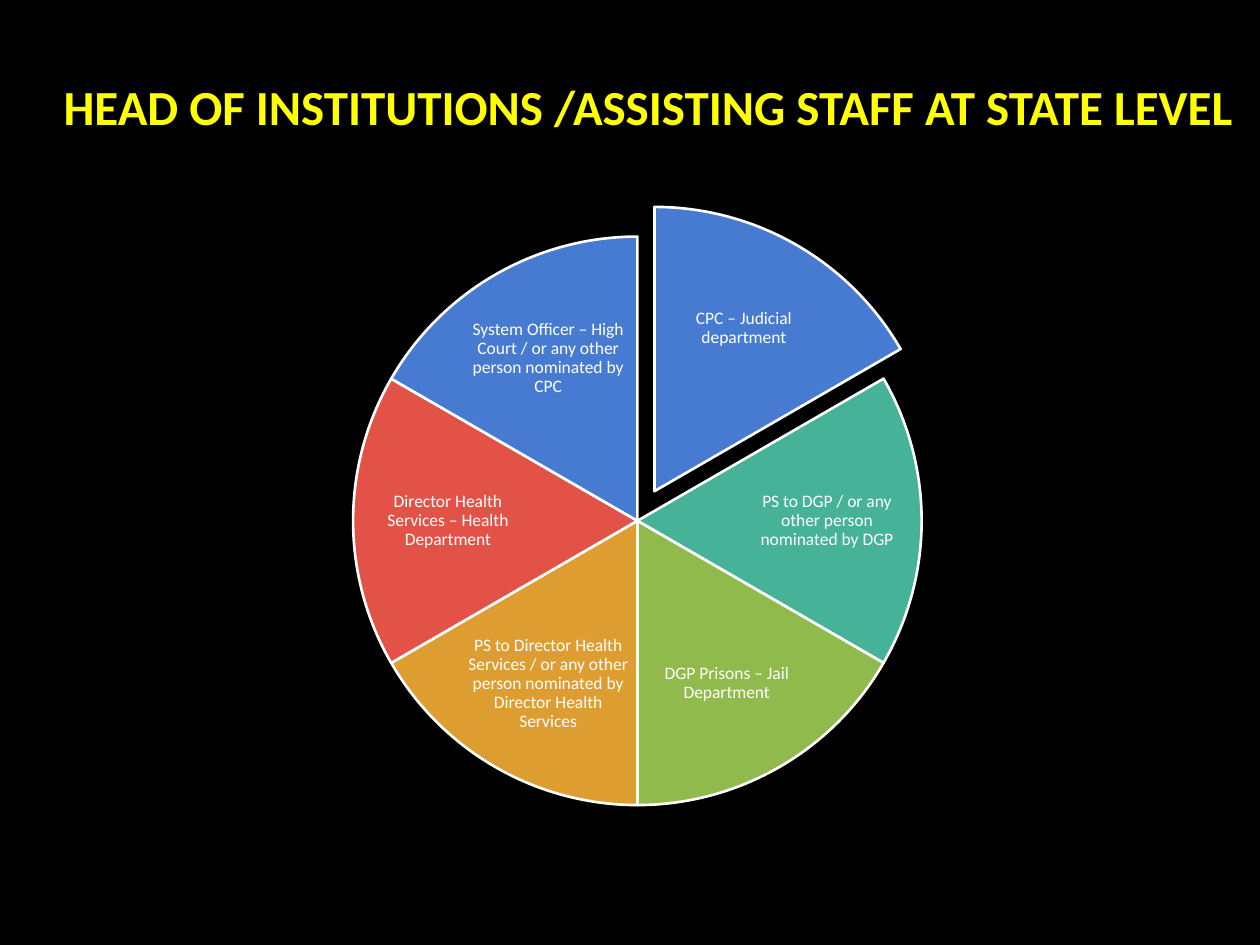
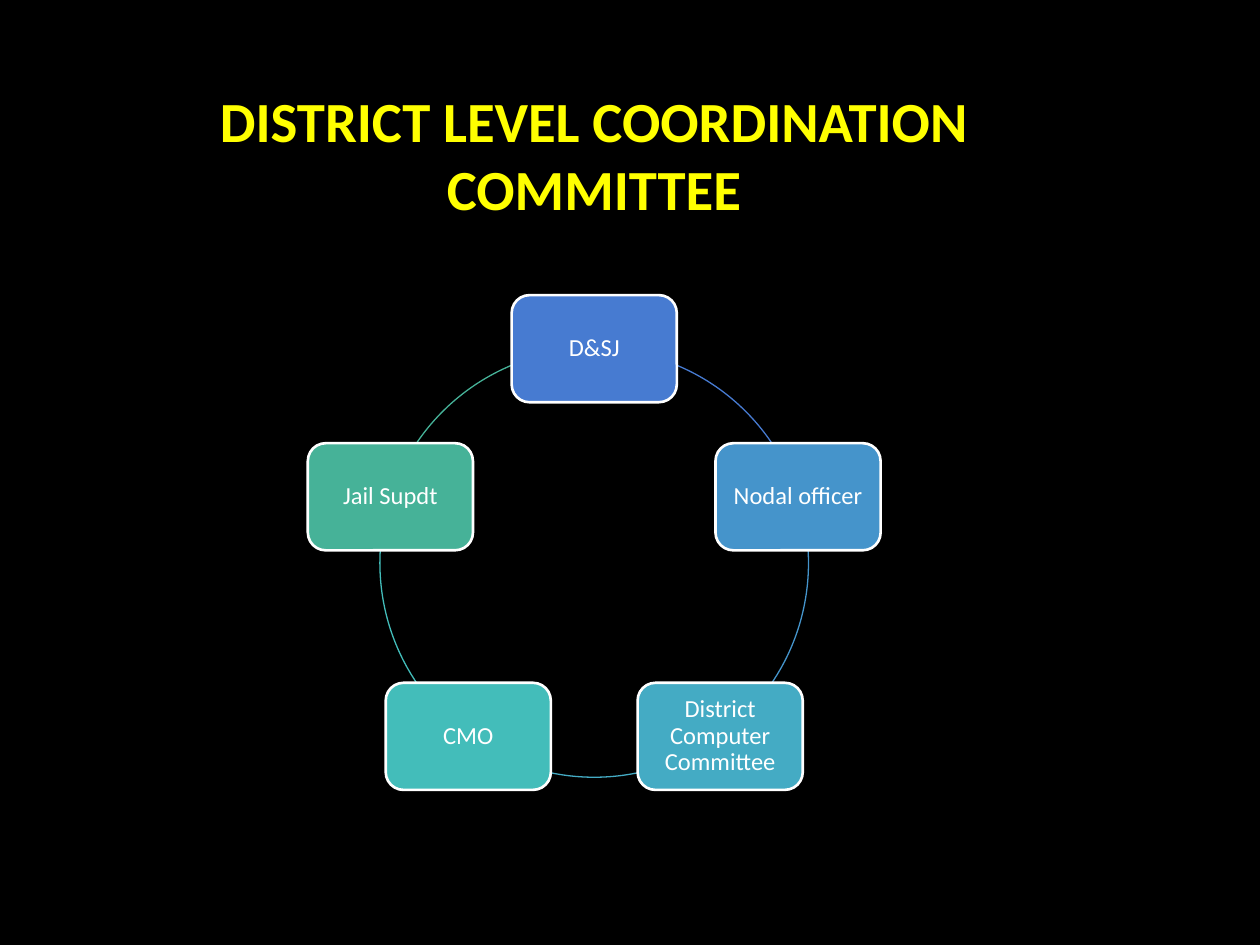
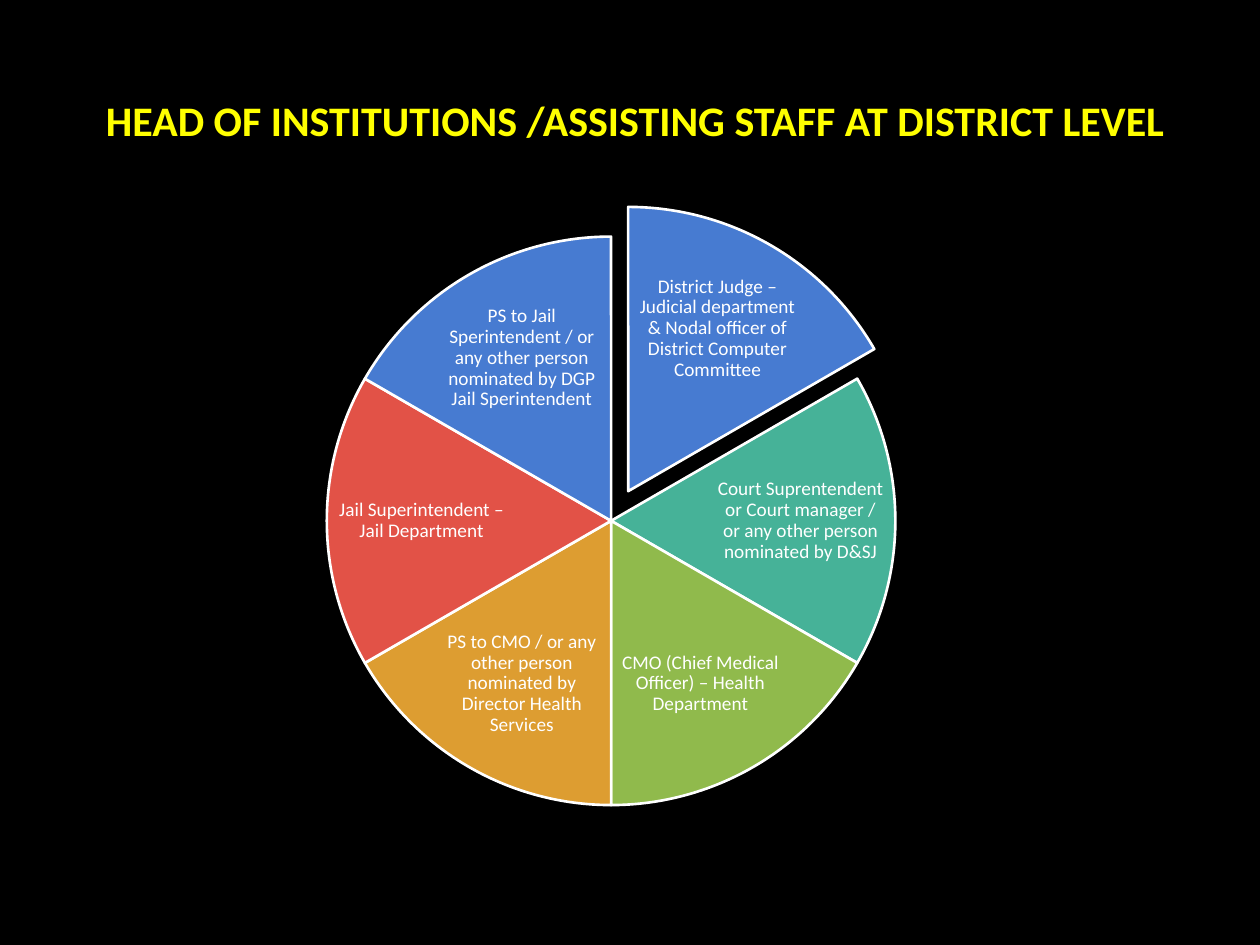
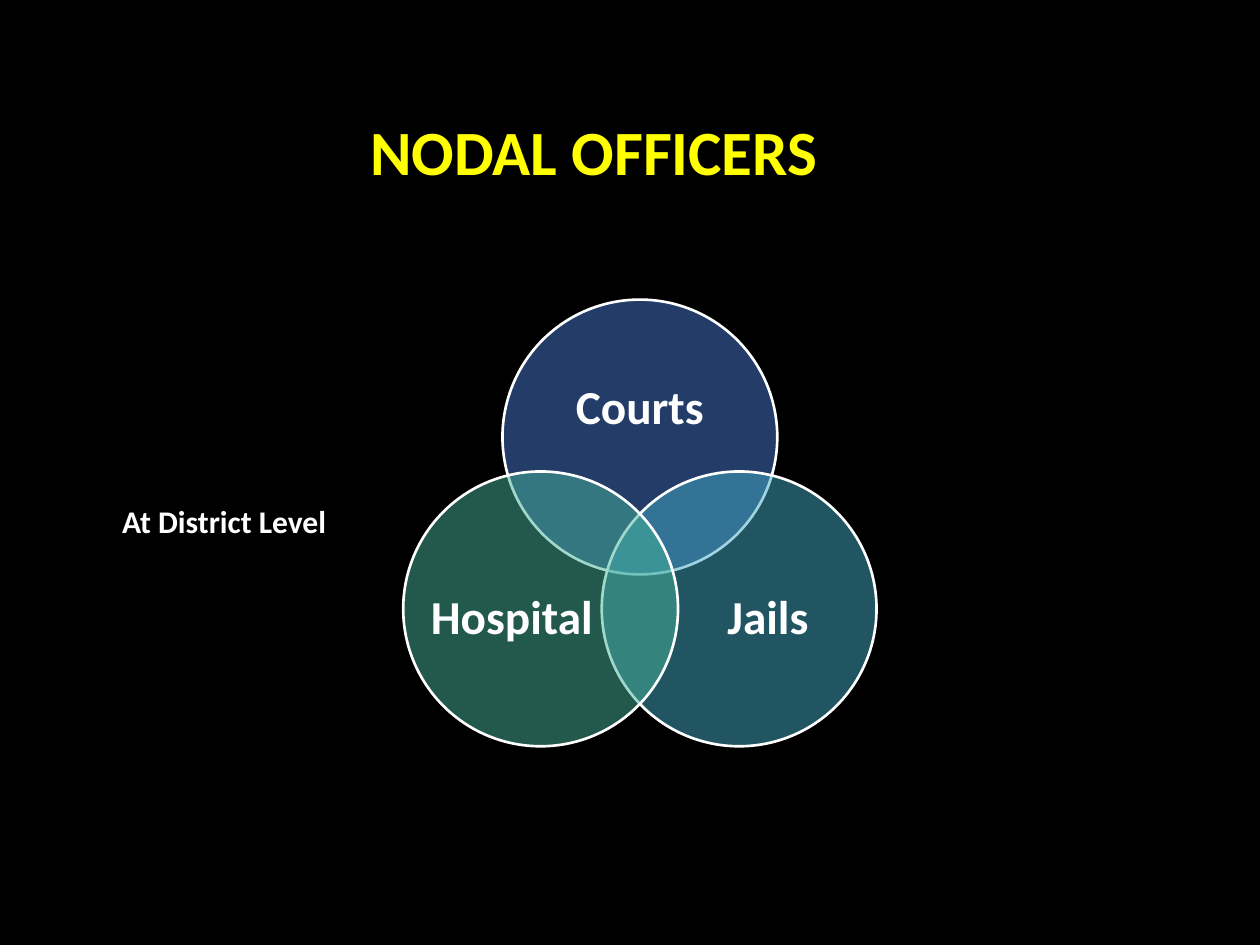
import math
from dataclasses import dataclass

from lxml import etree
from pptx import Presentation
from pptx import util as u
from pptx.dml.color import RGBColor
from pptx.enum import shapes, text
from pptx.oxml.ns import qn

Cm, Pt = u.Cm, u.Pt


@dataclass(frozen=True)
class Theme:
    font: str = "Calibri"
    background: str = "000000"
    heading: str = "FFFF00"
    ink: str = "FFFFFF"
    blue: str = "477BD1"
    sky: str = "4594CB"
    cyan: str = "44ABC4"
    aqua: str = "43BDBA"
    teal: str = "46B298"
    green: str = "90BA4C"
    amber: str = "DD9D31"
    red: str = "E25247"
    outline: float = 1.5
    ring: float = 0.75
    node_size: float = 14
    venn_size: float = 27
    caption_size: float = 18
    spacing: float = 0.9


THEME = Theme()
TITLE_ONLY, TITLE_AND_BODY = 5, 1
WIDE_TITLE = (1.42, 1.7, 21.11, 4.04)


def rgb(code):
    return RGBColor.from_string(code)


def write(frame, content, size, color=THEME.ink, bold=False, inset=0.25, foot=None,
          align=text.PP_ALIGN.CENTER, spacing=None):
    """Fill a text frame; inset and the bottom margin foot are in cm."""
    frame.word_wrap = True
    frame.auto_size = text.MSO_AUTO_SIZE.NONE
    frame.vertical_anchor = text.MSO_ANCHOR.MIDDLE
    frame.margin_left = frame.margin_right = frame.margin_top = Cm(inset)
    frame.margin_bottom = Cm(inset if foot is None else foot)
    frame.text = content
    paragraph = frame.paragraphs[0]
    paragraph.alignment = align
    if spacing:
        paragraph.line_spacing = spacing
    font = paragraph.runs[0].font
    font.name, font.size, font.bold = THEME.font, Pt(size), bold
    font.color.rgb = rgb(color)
    return paragraph


def place(shape, left, top, width, height):
    shape.left, shape.top = Cm(left), Cm(top)
    shape.width, shape.height = Cm(width), Cm(height)


def centred(x, y, width, height):
    """Box in Cm around a centre point."""
    return [Cm(v) for v in (x - width / 2, y - height / 2, width, height)]


def label(slide, box, content, **style):
    caption = slide.shapes.add_textbox(*box)
    write(caption.text_frame, content, spacing=THEME.spacing, **style)


def add_outlined(slide, preset, box, color=None, line=THEME.ink, weight=THEME.outline,
                 opacity=None):
    shape = slide.shapes.add_shape(preset, *box)
    shape.shadow.inherit = False
    shape.line.color.rgb = rgb(line)
    shape.line.width = Pt(weight)
    if color is None:
        shape.fill.background()
        return shape
    shape.fill.solid()
    shape.fill.fore_color.rgb = rgb(color)
    if opacity is not None:
        tint = shape.element.spPr.find(qn("a:solidFill")).find(qn("a:srgbClr"))
        etree.SubElement(tint, qn("a:alpha")).set("val", str(opacity * 1000))
    return shape


def set_sweep(shape, start, end):
    """Set the start and end angles, in degrees, of a pie or arc."""
    for i, angle in enumerate((start, end)):
        shape.adjustments[i] = round(angle % 360 * 0.6, 2)


def add_titled_slide(prs, heading, size, box=WIDE_TITLE, layout=TITLE_ONLY):
    slide = prs.slides.add_slide(prs.slide_layouts[layout])
    place(slide.shapes.title, *box)
    line_below = Pt(size * 1.08).cm
    write(slide.shapes.title.text_frame, heading, size, color=THEME.heading, bold=True,
          inset=0.13, foot=0.13 + line_below)
    return slide


def draw_wheel(slide, x, y, roles, size, inset):
    """Six equal slices clockwise from the top, the first one pulled out."""
    diameter, pull, step = 11.46, 0.69, 60
    colors = (THEME.blue, THEME.teal, THEME.green, THEME.amber, THEME.red, THEME.blue)
    for i, (role, color) in enumerate(zip(roles, colors)):
        start = -90 + step * i
        middle = math.radians(start + step / 2)
        across, down = math.cos(middle), math.sin(middle)
        shift = pull if i == 0 else 0
        hub_x, hub_y = x + shift * across, y + shift * down
        piece = add_outlined(slide, shapes.MSO_SHAPE.PIE,
                             centred(hub_x, hub_y, diameter, diameter), color)
        set_sweep(piece, start, start + step)
        at_side = abs(across) > 0.9
        reach, width, height = (3.82, 3.45, 2.31) if at_side else (1.8, 3.33, 2.46)
        label_box = centred(hub_x + math.copysign(reach, across), hub_y + 3.79 * down,
                            width, height)
        label(slide, label_box, role, size=size, inset=inset)


def draw_cycle(slide, x, y, members):
    """Boxes spread evenly on a ring, each joined to the next by an arc."""
    radius, step = 4.32, 360 / len(members)
    for i, (_, color) in enumerate(members):
        arc = add_outlined(slide, shapes.MSO_SHAPE.ARC,
                           centred(x, y, 2 * radius, 2 * radius),
                           line=color, weight=THEME.ring)
        set_sweep(arc, -90 + step * i, -90 + step * (i + 1))
    for i, (member, color) in enumerate(members):
        angle = math.radians(-90 + step * i)
        node_box = centred(x + radius * math.cos(angle), y + radius * math.sin(angle),
                           3.33, 2.16)
        node = add_outlined(slide, shapes.MSO_SHAPE.ROUNDED_RECTANGLE, node_box, color)
        write(node.text_frame, member, THEME.node_size, inset=0.15,
              spacing=THEME.spacing)


def draw_venn(slide, x, y, circles):
    """Overlapping circles; each label has its own offset and size."""
    radius, diameter, step = 2.31, 5.54, 360 / len(circles)
    for i, (name, color, (dx, dy), label_size) in enumerate(circles):
        angle = math.radians(-90 + step * i)
        cx, cy = x + radius * math.cos(angle), y + radius * math.sin(angle)
        add_outlined(slide, shapes.MSO_SHAPE.OVAL, centred(cx, cy, diameter, diameter),
                     color, opacity=50)
        label(slide, centred(cx + dx, cy + dy, *label_size), name,
              size=THEME.venn_size, bold=True, inset=0)


def write_level_note(slide, note):
    body = slide.placeholders[1]
    place(body, 1.42, 5.94, 21.11, 10.13)
    paragraph = write(body.text_frame, note, THEME.caption_size, bold=True,
                      inset=0.25, foot=1.27, align=text.PP_ALIGN.LEFT)
    properties = paragraph._p.get_or_add_pPr()
    properties.set("marL", str(Cm(0.79)))
    properties.set("indent", "0")
    etree.SubElement(properties, qn("a:buNone"))


def state_staff_slide(prs):
    slide = add_titled_slide(
        prs, "HEAD OF INSTITUTIONS /ASSISTING STAFF AT STATE LEVEL", 28,
        box=(1.07, 0.64, 23.98, 4.04))
    roles = (
        "CPC – Judicial department",
        "PS to DGP / or any other person nominated by DGP",
        "DGP Prisons – Jail Department",
        "PS to Director Health Services / or any other person nominated by "
        "Director Health Services",
        "Director Health Services – Health Department",
        "System Officer – High Court / or any other person nominated by CPC",
    )
    draw_wheel(slide, 12.85, 10.5, roles, size=10, inset=0.03)


def district_committee_slide(prs):
    slide = add_titled_slide(prs, "DISTRICT LEVEL COORDINATION COMMITTEE", 32.4)
    members = (
        ("D&SJ", THEME.blue),
        ("Nodal officer", THEME.sky),
        ("District Computer Committee", THEME.cyan),
        ("CMO", THEME.aqua),
        ("Jail Supdt", THEME.teal),
    )
    draw_cycle(slide, 11.98, 11.35, members)


def district_staff_slide(prs):
    slide = add_titled_slide(
        prs, "HEAD OF INSTITUTIONS /ASSISTING STAFF AT DISTRICT LEVEL", 24,
        box=(0.84, 0.84, 23.93, 4.04))
    roles = (
        "District Judge – Judicial department & Nodal officer of District Computer "
        "Committee",
        "Court Suprentendent or Court manager / or any other person nominated by D&SJ",
        "CMO (Chief Medical Officer) – Health Department",
        "PS to CMO / or any other person nominated by Director Health Services",
        "Jail Superintendent – Jail Department",
        "PS to Jail Sperintendent / or any other person nominated by DGP "
        "Jail Sperintendent",
    )
    draw_wheel(slide, 12.32, 10.5, roles, size=11, inset=0.05)


def nodal_officers_slide(prs):
    slide = add_titled_slide(prs, "NODAL OFFICERS", 36, layout=TITLE_AND_BODY)
    write_level_note(slide, "At District Level")
    circles = (
        ("Courts", THEME.blue, (0, -0.56), (4.06, 2.49)),
        ("Jails", THEME.cyan, (0.58, 0.2), (3.33, 3.05)),
        ("Hospital", THEME.teal, (-0.58, 0.2), (3.33, 3.05)),
    )
    draw_venn(slide, 12.9, 11.12, circles)


def main():
    prs = Presentation()
    prs.slide_width, prs.slide_height = Cm(25.4), Cm(19.05)
    backdrop = prs.slide_master.background.fill
    backdrop.solid()
    backdrop.fore_color.rgb = rgb(THEME.background)
    state_staff_slide(prs)
    district_committee_slide(prs)
    district_staff_slide(prs)
    nodal_officers_slide(prs)
    prs.save("out.pptx")


if __name__ == "__main__":
    main()
